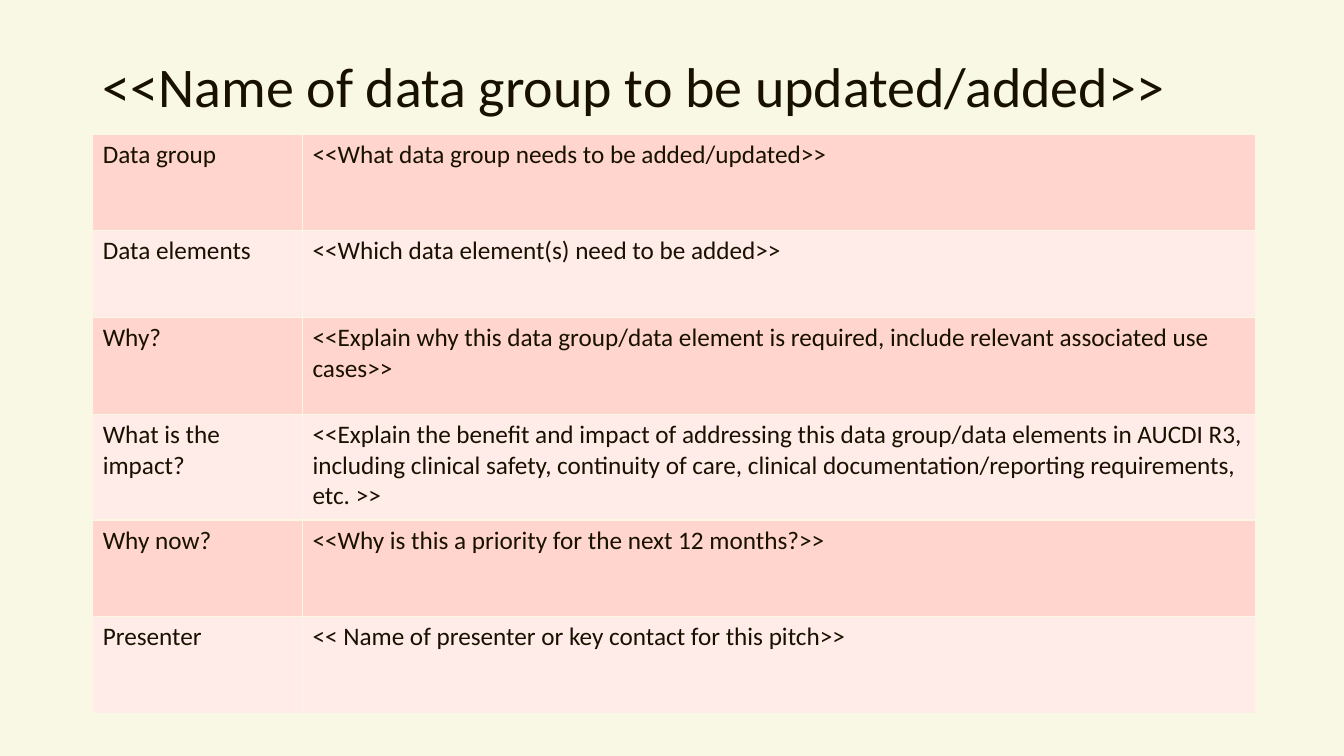
from lxml import etree
from pptx import Presentation
from pptx.dml.color import RGBColor
from pptx.enum import text
from pptx.oxml import ns
from pptx.util import Inches, Pt

TITLE = "<<Name of data group to be updated/added>>"
# label, prompt, row height in inches
ROWS = [
    ("Data group", "<<What data group needs to be added/updated>>", 0.96),
    ("Data elements", "<<Which data element(s) need to be added>>", 0.86),
    ("Why?", "<<Explain why this data group/data element is required, "
     "include relevant associated use cases>>", 0.96),
    ("What is the impact?", "<<Explain the benefit and impact of addressing this "
     "data group/data elements in AUCDI R3, including clinical safety, continuity "
     "of care, clinical documentation/reporting requirements, etc. >>", 1.05),
    ("Why now?", "<<Why is this a priority for the next 12 months?>>", 0.96),
    ("Presenter", "<< Name of presenter or key contact for this pitch>>", 0.96),
]
COLUMN_WIDTHS = (2.08, 9.45)
BACKGROUND, INK = "F9F8E4", "181100"
BANDS = ("FFD5CD", "FFEBE8")
LEFT, TABLE_TOP = 0.92, 1.33


def paint(fill, color):
    fill.solid()
    fill.fore_color.rgb = RGBColor.from_string(color)


def format_text(paragraph, size):
    for run in paragraph.runs:
        run.font.name = "Calibri"
        run.font.size = Pt(size)
        run.font.color.rgb = RGBColor.from_string(INK)


def add_borders(cell, color, width):
    properties = cell._tc.get_or_add_tcPr()
    for index, side in enumerate(("lnL", "lnR", "lnT", "lnB")):
        line = etree.Element(ns.qn(f"a:{side}"), w=str(Pt(width)))
        fill = etree.SubElement(line, ns.qn("a:solidFill"))
        etree.SubElement(fill, ns.qn("a:srgbClr"), val=color)
        properties.insert(index, line)


presentation = Presentation()
presentation.slide_width, presentation.slide_height = Inches(13.33), Inches(7.5)
slide = presentation.slides.add_slide(presentation.slide_layouts[5])
paint(slide.background.fill, BACKGROUND)

title = slide.shapes.title
title.left, title.top = Inches(LEFT), Inches(0.42)
title.width, title.height = Inches(11.5), Inches(0.93)
title.text_frame.text = TITLE
title.text_frame.vertical_anchor = text.MSO_ANCHOR.MIDDLE
heading = title.text_frame.paragraphs[0]
heading.alignment = text.PP_ALIGN.LEFT
heading.line_spacing = 0.9
format_text(heading, 40)

table = slide.shapes.add_table(
    len(ROWS), len(COLUMN_WIDTHS), Inches(LEFT), Inches(TABLE_TOP),
    Inches(sum(COLUMN_WIDTHS)), Inches(sum(row[-1] for row in ROWS))).table
table.first_row = False
for column, width in zip(table.columns, COLUMN_WIDTHS):
    column.width = Inches(width)
for index, (label, prompt, height) in enumerate(ROWS):
    table.rows[index].height = Inches(height)
    for cell, words in zip(table.rows[index].cells, (label, prompt)):
        cell.text_frame.text = words
        format_text(cell.text_frame.paragraphs[0], 18)
        paint(cell.fill, BANDS[index % 2])
        add_borders(cell, BACKGROUND, 1)

presentation.save("out.pptx")
